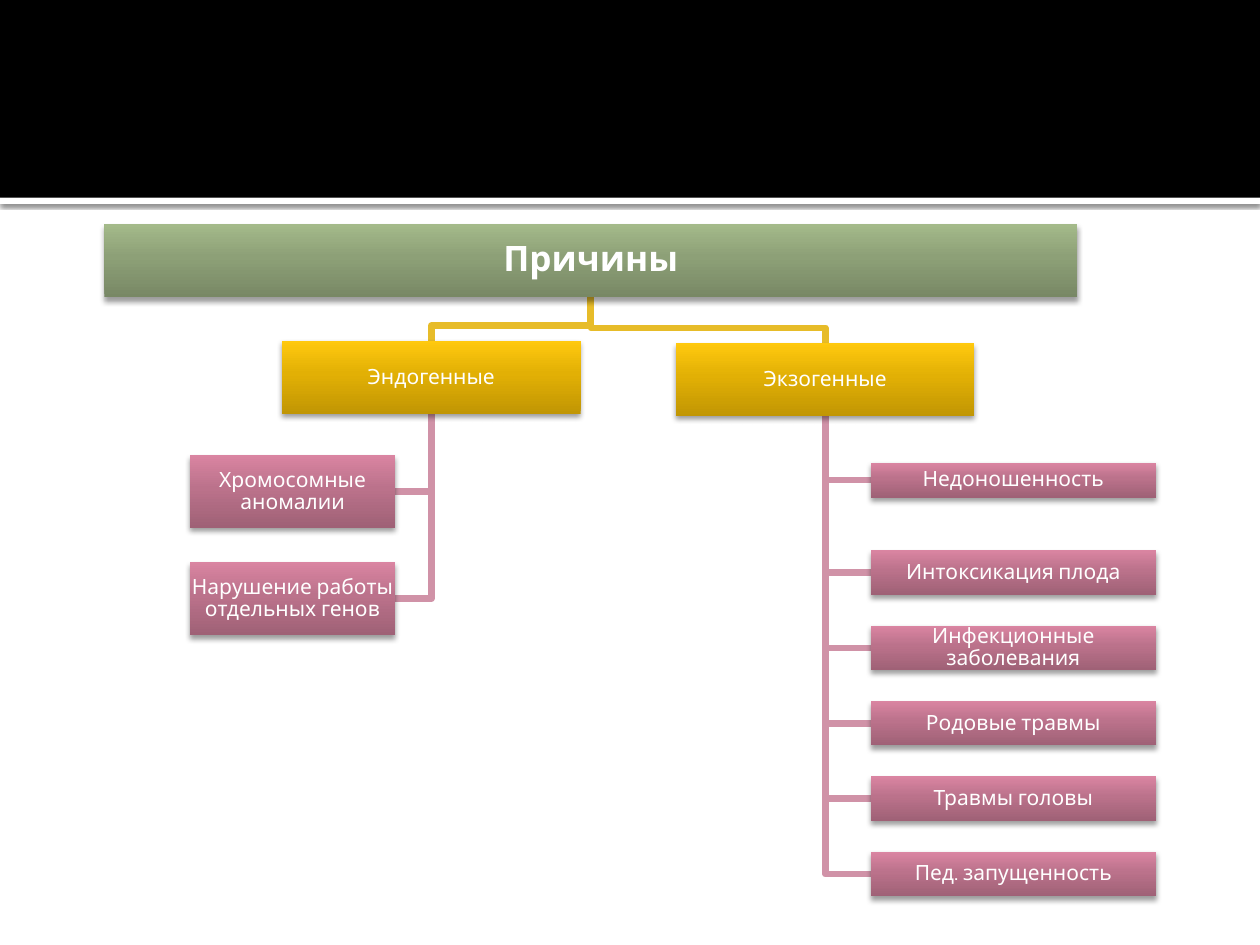
import lxml.etree
import pptx
import pptx.dml.color
import pptx.enum.shapes
import pptx.enum.text
import pptx.oxml.ns
import pptx.util

Pt = pptx.util.Pt
RGBColor = pptx.dml.color.RGBColor
qn = pptx.oxml.ns.qn

COLORS = {
    "white": "FFFFFF",
    "black": "000000",
    "gold_line": "E7BC29",
    "pink_line": "D092A7",
}
GRADIENTS = {
    "green": ("788865", "8DA077", "A4BA8A"),
    "gold": ("C19604", "E2B005", "FFC90F"),
    "pink": ("9F6176", "BB728B", "DA85A2"),
}
FONT = "Cabin"
LINE_WIDTH = 3.78
BRANCH_SIZE = (170.6, 41.8)
ENDOGENOUS = ["Хромосомные аномалии", "Нарушение работы отдельных генов"]
EXOGENOUS = ["Интоксикация плода", "Инфекционные заболевания", "Родовые травмы",
             "Травмы головы", "Пед. запущенность"]


def add_rectangle(slide, box):
    shape = slide.shapes.add_shape(
        pptx.enum.shapes.MSO_SHAPE.RECTANGLE, *(Pt(value) for value in box))
    shape.shadow.inherit = False
    shape.line.fill.background()
    return shape


def add_shadow(shape, blur, distance, opacity):
    effects = shape._element.spPr.find(qn("a:effectLst"))
    shadow = lxml.etree.SubElement(
        effects, qn("a:outerShdw"), blurRad=str(Pt(blur)), dist=str(Pt(distance)),
        dir="5400000", algn="ctr", rotWithShape="0")
    color = lxml.etree.SubElement(shadow, qn("a:srgbClr"), val=COLORS["black"])
    lxml.etree.SubElement(color, qn("a:alpha"), val=str(opacity * 1000))


def fill_gradient(shape, name):
    shape.fill.gradient()
    shape.fill.gradient_angle = 90
    stops = shape._element.spPr.find(".//" + qn("a:gsLst"))
    for stop in list(stops):
        stops.remove(stop)
    for position, color in zip((0, 55, 100), GRADIENTS[name]):
        stop = lxml.etree.SubElement(stops, qn("a:gs"), pos=str(position * 1000))
        lxml.etree.SubElement(stop, qn("a:srgbClr"), val=color)


def add_node(slide, box, text, gradient, size=12, bold=False):
    shape = add_rectangle(slide, box)
    fill_gradient(shape, gradient)
    add_shadow(shape, 3.1, 2, 38)
    frame = shape.text_frame
    frame.word_wrap = True
    frame.vertical_anchor = pptx.enum.text.MSO_ANCHOR.MIDDLE
    frame.margin_left = frame.margin_right = Pt(0.7)
    frame.margin_top = frame.margin_bottom = Pt(0.7)
    frame.text = text
    paragraph = frame.paragraphs[0]
    paragraph.alignment = pptx.enum.text.PP_ALIGN.CENTER
    paragraph.line_spacing = 0.9
    font = paragraph.runs[0].font
    font.name = FONT
    font.size = Pt(size)
    font.bold = bold
    font.color.rgb = RGBColor.from_string(COLORS["white"])


def add_elbow(slide, points, color):
    start, *rest = [(Pt(x), Pt(y)) for x, y in points]
    builder = slide.shapes.build_freeform(*start)
    builder.add_line_segments(rest, close=False)
    shape = builder.convert_to_shape()
    shape.shadow.inherit = False
    shape.fill.background()
    shape.line.color.rgb = RGBColor.from_string(COLORS[color])
    shape.line.width = Pt(LINE_WIDTH)
    lxml.etree.SubElement(shape._element.spPr.find(qn("a:ln")), qn("a:round"))


def bottom_center(box):
    left, top, width, height = box
    return left + width / 2, top + height


def connect_branch(slide, root, branch):
    root_x, root_y = bottom_center(root)
    branch_x, branch_y = bottom_center(branch)[0], branch[1]
    bend = branch_y - 8.6
    add_elbow(slide, [(root_x, root_y), (root_x, bend),
                      (branch_x, bend), (branch_x, branch_y)], "gold_line")


def connect_leaf(slide, branch, leaf):
    x, y = bottom_center(branch)
    left, top, width, height = leaf
    edge = left if left > x else left + width
    middle = top + height / 2
    add_elbow(slide, [(x, y), (x, middle), (edge, middle)], "pink_line")


def build_banner(slide, box):
    left, top, width, height = box
    strip = add_rectangle(slide, (left, top + height, width, 3.6))
    add_shadow(strip, 2.5, 0.8, 60)
    band = add_rectangle(slide, box)
    for shape, color in ((strip, "white"), (band, "black")):
        shape.fill.solid()
        shape.fill.fore_color.rgb = RGBColor.from_string(COLORS[color])


def build_branch(slide, root, box, title, leaves):
    connect_branch(slide, root, box)
    for leaf, _ in leaves:
        connect_leaf(slide, box, leaf)
    add_node(slide, box, title, "gold")
    for leaf, text in leaves:
        add_node(slide, leaf, text, "pink")


def build_causes(slide, root):
    endogenous = [((108.6, 260 + 61.2 * row, 117.2, 41.8), text)
                  for row, text in enumerate(ENDOGENOUS)]
    exogenous = [((497.6, 264.4, 163, 20), "Недоношенность")]
    exogenous += [((497.6, 314.4 + 43.1 * row, 163, 25.4), text)
                  for row, text in enumerate(EXOGENOUS)]
    build_branch(slide, root, (386.3, 196, *BRANCH_SIZE), "Экзогенные", exogenous)
    build_branch(slide, root, (161.2, 194.7, *BRANCH_SIZE), "Эндогенные", endogenous)
    add_node(slide, root, "Причины", "green", size=20, bold=True)


def main():
    presentation = pptx.Presentation()
    presentation.slide_width = Pt(720)
    presentation.slide_height = Pt(540)
    slide = presentation.slides.add_slide(presentation.slide_layouts[6])
    build_banner(slide, (0, 0, 720, 113))
    build_causes(slide, (59.6, 128, 556, 41.8))
    presentation.save("out.pptx")


if __name__ == "__main__":
    main()
